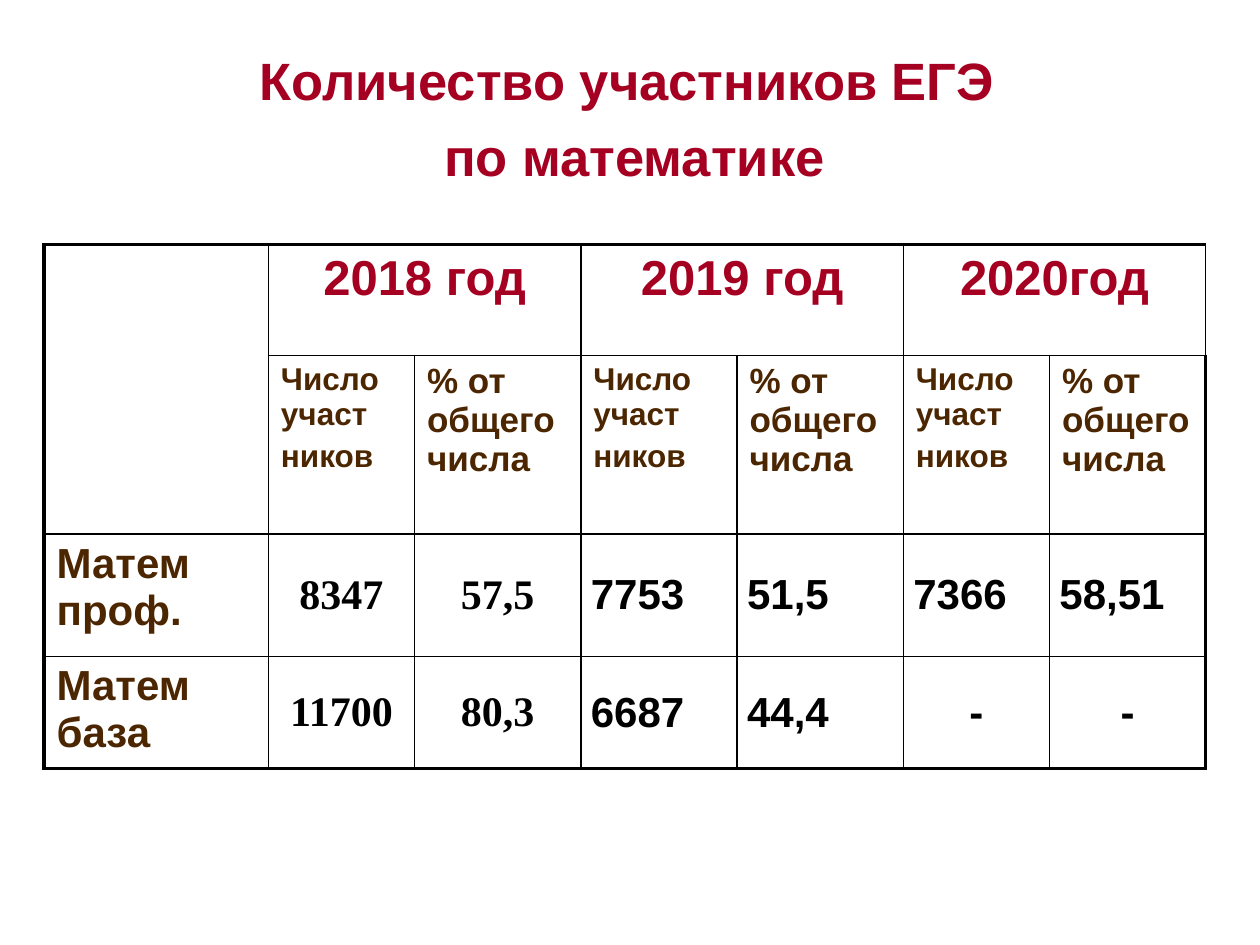
import pptx
import pptx.dml.color
import pptx.enum.text
import pptx.oxml
import pptx.oxml.ns
import pptx.util

RED, BROWN, BLACK = "A50021", "4C2600", "000000"
COLUMNS = [1.78, 1.16, 1.32, 1.24, 1.32, 1.16, 1.24]
ROWS = [0.88, 1.42, 0.97, 0.89]
YEARS = ["2018 год", "2019 год", "2020год"]
RESULTS = [
    ["Матем проф.", "8347", "57,5", "7753", "51,5", "7366", "58,51"],
    ["Матем база", "11700", "80,3", "6687", "44,4", "-", "-"],
]
LEFT = pptx.enum.text.PP_ALIGN.LEFT
CENTER = pptx.enum.text.PP_ALIGN.CENTER


def color(value):
    """Turn a hex string into a colour."""
    return pptx.dml.color.RGBColor.from_string(value)


def write(frame, lines, size, ink, align=LEFT, face="Arial", gap=0.2):
    """Fill a text frame with bold paragraphs, spaced by a share of the size."""
    frame.text = "\n".join(lines)
    for index, para in enumerate(frame.paragraphs):
        para.alignment = align
        para.space_before = pptx.util.Pt(size * gap if index else 0)
        para.font.name = face
        para.font.size = pptx.util.Pt(size)
        para.font.bold = True
        para.font.color.rgb = color(ink)


def add_title(page, lines):
    """Place the heading in the title placeholder."""
    title = page.shapes.title
    title.left, title.top = pptx.util.Inches(0.27), pptx.util.Inches(0.33)
    title.width, title.height = pptx.util.Inches(9.53), pptx.util.Inches(1.5)
    frame = title.text_frame
    frame.auto_size = pptx.enum.text.MSO_AUTO_SIZE.NONE
    frame.vertical_anchor = pptx.enum.text.MSO_ANCHOR.TOP
    write(frame, lines, 30, RED, CENTER, gap=0.25)


def add_border(cell, side, width):
    """Draw one solid black edge of a cell."""
    namespace = pptx.oxml.ns.nsdecls("a")
    cell._tc.get_or_add_tcPr().append(pptx.oxml.parse_xml(
        f'<a:{side} {namespace} w="{pptx.util.Pt(width)}"><a:solidFill>'
        f'<a:srgbClr val="{BLACK}"/></a:solidFill></a:{side}>'))


def style_grid(table):
    """Clear the cell fills and rule the grid with a heavier outer frame."""
    last_row, last_column = len(ROWS) - 1, len(COLUMNS) - 1
    for row in range(len(ROWS)):
        for column in range(len(COLUMNS)):
            cell = table.cell(row, column)
            outer = {"lnL": column == 0, "lnR": column == last_column,
                     "lnT": row == 0, "lnB": row == last_row}
            for side, heavy in outer.items():
                add_border(cell, side, 2.25 if heavy else 1)
            cell.fill.background()


def add_grid(page):
    """Add the table with its column widths, row heights and merged headers."""
    table = page.shapes.add_table(
        len(ROWS), len(COLUMNS), pptx.util.Inches(0.35), pptx.util.Inches(1.94),
        pptx.util.Inches(sum(COLUMNS)), pptx.util.Inches(sum(ROWS))).table
    for column, width in zip(table.columns, COLUMNS):
        column.width = pptx.util.Inches(width)
    for row, height in zip(table.rows, ROWS):
        row.height = pptx.util.Inches(height)
    style_grid(table)
    table.cell(0, 0).merge(table.cell(1, 0))
    return table


def fill_headers(table):
    """Write each year over its pair of column headings."""
    for index, year in enumerate(YEARS):
        column = 1 + 2 * index
        heading = table.cell(0, column)
        heading.merge(table.cell(0, column + 1))
        write(heading.text_frame, [year], 28, RED, CENTER)
        write(table.cell(1, column).text_frame, ["Число участ", "ников"], 18, BROWN)
        write(table.cell(1, column + 1).text_frame, ["% от общего числа"], 20, BROWN)


def fill_results(table):
    """Write the exam names and their figures."""
    for row, (name, *figures) in enumerate(RESULTS, start=2):
        write(table.cell(row, 0).text_frame, [name], 24, BROWN)
        for column, figure in enumerate(figures, start=1):
            cell = table.cell(row, column)
            cell.vertical_anchor = pptx.enum.text.MSO_ANCHOR.MIDDLE
            cell.margin_left = cell.margin_right = pptx.util.Inches(0.08)
            cell.margin_top = cell.margin_bottom = 0
            first_year = column <= 2
            align = CENTER if first_year or figure == "-" else LEFT
            face = "Times New Roman" if first_year else "Arial"
            write(cell.text_frame, [figure], 24, BLACK, align, face)


def main():
    """Build the slide and save it."""
    deck = pptx.Presentation()
    deck.slide_width, deck.slide_height = pptx.util.Inches(10), pptx.util.Inches(7.5)
    page = deck.slides.add_slide(deck.slide_layouts.get_by_name("Title Only"))
    add_title(page, ["Количество участников ЕГЭ ", "по математике"])
    table = add_grid(page)
    fill_headers(table)
    fill_results(table)
    deck.save("out.pptx")


if __name__ == "__main__":
    main()
